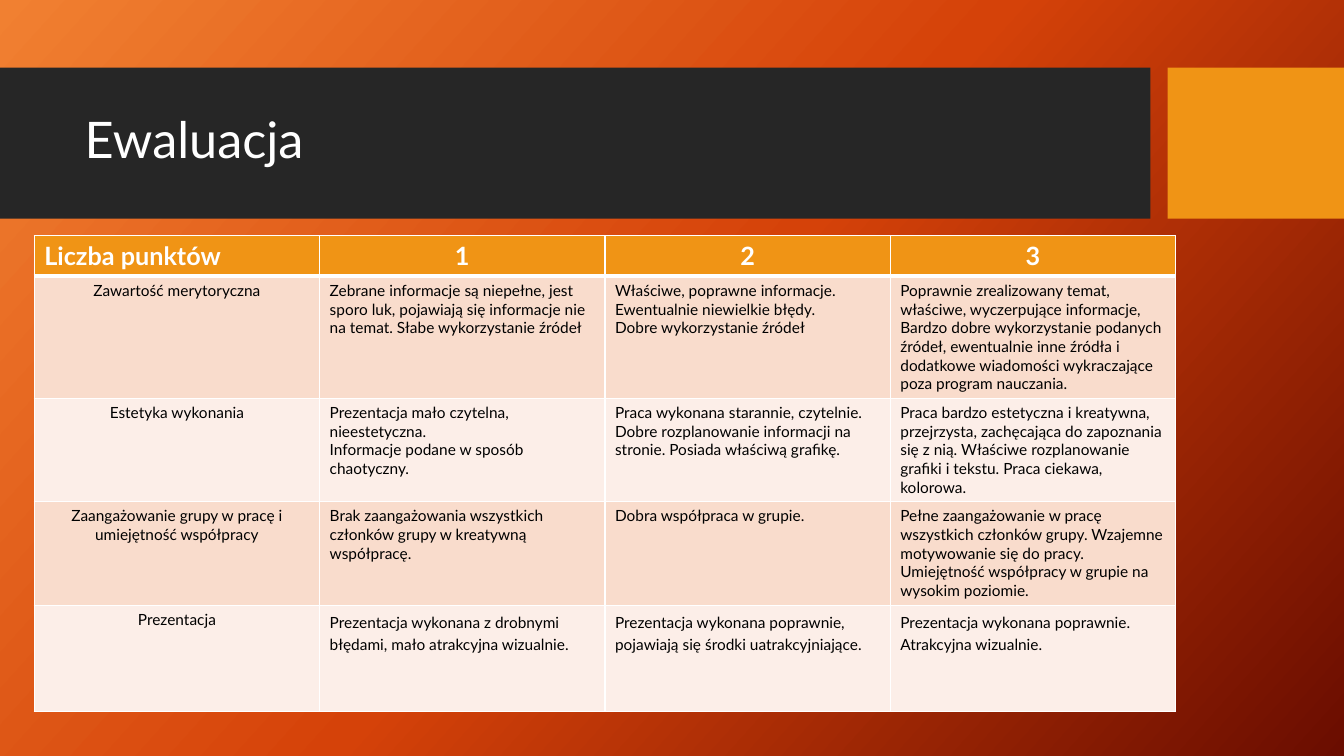
from copy import deepcopy

from pptx import Presentation
from pptx.dml.color import RGBColor
from pptx.enum.shapes import MSO_SHAPE
from pptx.enum.text import MSO_ANCHOR, PP_ALIGN
from pptx.oxml import parse_xml
from pptx.oxml.ns import nsdecls, qn
from pptx.util import Inches, Pt

RECTANGLE = MSO_SHAPE.RECTANGLE
MIDDLE = MSO_ANCHOR.MIDDLE
LEFT, CENTER = PP_ALIGN.LEFT, PP_ALIGN.CENTER

WHITE = RGBColor(0xFF, 0xFF, 0xFF)
BLACK = RGBColor(0, 0, 0)
CHARCOAL = RGBColor(0x26, 0x26, 0x26)
AMBER = RGBColor(0xF0, 0x94, 0x15)
PEACH = RGBColor(0xF9, 0xDC, 0xCC)
CREAM = RGBColor(0xFC, 0xEE, 0xE8)
BACKDROP = [
    (0, RGBColor(0xF1, 0x80, 0x31)),
    (0.5, RGBColor(0xD5, 0x42, 0x09)),
    (1, RGBColor(0x6A, 0x0D, 0x00)),
]
FONT = "Lato"

TITLE = "Ewaluacja"
BANDS = [(0, 11.41, CHARCOAL), (11.58, 1.75, AMBER)]
RUBRIC = [
    ("Liczba punktów", "1", "2", "3"),
    (
        "Zawartość merytoryczna",
        "Zebrane informacje są niepełne, jest sporo luk, pojawiają się informacje "
        "nie na temat. Słabe wykorzystanie źródeł",
        "Właściwe, poprawne informacje. Ewentualnie niewielkie błędy.\n"
        "Dobre wykorzystanie źródeł",
        "Poprawnie zrealizowany temat, właściwe, wyczerpujące informacje, Bardzo "
        "dobre wykorzystanie podanych źródeł, ewentualnie inne źródła i dodatkowe "
        "wiadomości wykraczające poza program nauczania.",
    ),
    (
        "Estetyka wykonania",
        "Prezentacja mało czytelna, nieestetyczna.\n"
        "Informacje podane w sposób chaotyczny.",
        "Praca wykonana starannie, czytelnie. Dobre rozplanowanie informacji na "
        "stronie. Posiada właściwą grafikę.",
        "Praca bardzo estetyczna i kreatywna, przejrzysta, zachęcająca do zapoznania "
        "się z nią. Właściwe rozplanowanie grafiki i tekstu. Praca ciekawa, kolorowa.",
    ),
    (
        "Zaangażowanie grupy w pracę i umiejętność współpracy",
        "Brak zaangażowania wszystkich członków grupy w kreatywną współpracę.",
        "Dobra współpraca w grupie.",
        "Pełne zaangażowanie w pracę wszystkich członków grupy. Wzajemne motywowanie "
        "się do pracy. Umiejętność współpracy w grupie na wysokim poziomie.",
    ),
    (
        "Prezentacja",
        "Prezentacja wykonana z drobnymi błędami, mało atrakcyjna wizualnie.",
        "Prezentacja wykonana poprawnie, pojawiają się środki uatrakcyjniające.",
        "Prezentacja wykonana poprawnie. Atrakcyjna wizualnie.",
    ),
]
ROW_HEIGHTS = [0.39, 1.21, 1.02, 1.03, 1.05]
COLUMN_WIDTH = 2.83


def write(frame, text, size=11, color=BLACK, bold=False, align=LEFT, spacing=1.0):
    frame.text = text
    for paragraph in frame.paragraphs:
        paragraph.alignment = align
        paragraph.line_spacing = spacing
        font = paragraph.runs[0].font
        font.name, font.size, font.bold = FONT, Pt(size), bold
        font.color.rgb = color


def add_border(cell, side, width):
    cell._tc.get_or_add_tcPr().append(parse_xml(
        f'<a:{side} {nsdecls("a")} w="{Pt(width)}"><a:solidFill>'
        f'<a:srgbClr val="{WHITE}"/></a:solidFill></a:{side}>'
    ))


def paint_backdrop(slide):
    fill = slide.background.fill
    fill.gradient()
    fill.gradient_angle = 360 - 42
    stop_list = next(slide._element.iter(qn("a:gsLst")))
    stop_list.append(deepcopy(stop_list[0]))
    for stop, (position, color) in zip(fill.gradient_stops, BACKDROP):
        stop.position = position
        stop.color.rgb = color


def add_heading(slide):
    title = slide.shapes.title
    for left, width, color in BANDS:
        band = slide.shapes.add_shape(
            RECTANGLE, Inches(left), Inches(0.67), Inches(width), Inches(1.5))
        band.shadow.inherit = False
        band.fill.solid()
        band.fill.fore_color.rgb = color
        band.line.fill.background()
        title._element.addprevious(band._element)
    title.left, title.top = Inches(0.74), Inches(0.82)
    title.width, title.height = Inches(10.51), Inches(1.18)
    title.text_frame.vertical_anchor = MIDDLE
    write(title.text_frame, TITLE, size=36, color=WHITE, spacing=0.9)


def add_rubric(slide):
    columns = len(RUBRIC[0])
    table = slide.shapes.add_table(
        len(RUBRIC), columns, Inches(0.34), Inches(2.34),
        Inches(COLUMN_WIDTH * columns), Inches(sum(ROW_HEIGHTS))).table
    for column in table.columns:
        column.width = Inches(COLUMN_WIDTH)
    last = len(RUBRIC) - 1
    for r, texts in enumerate(RUBRIC):
        table.rows[r].height = Inches(ROW_HEIGHTS[r])
        for c, text in enumerate(texts):
            cell = table.cell(r, c)
            borders = {"lnL": 1, "lnR": 1, "lnT": 3 if r == 1 else 1,
                       "lnB": 3 if r == 0 else 1}
            for side, width in borders.items():
                add_border(cell, side, width)
            cell.fill.solid()
            if r == 0:
                cell.fill.fore_color.rgb = AMBER
                write(cell.text_frame, text, size=18, color=WHITE, bold=True,
                      align=CENTER if c else LEFT)
            else:
                cell.fill.fore_color.rgb = PEACH if r % 2 else CREAM
                write(cell.text_frame, text, align=LEFT if c else CENTER,
                      spacing=1.15 if r == last and c else 1.0)


def main():
    deck = Presentation()
    deck.slide_width, deck.slide_height = Inches(13.33), Inches(7.5)
    slide = deck.slides.add_slide(deck.slide_layouts[5])
    paint_backdrop(slide)
    add_heading(slide)
    add_rubric(slide)
    deck.save("out.pptx")


if __name__ == "__main__":
    main()
